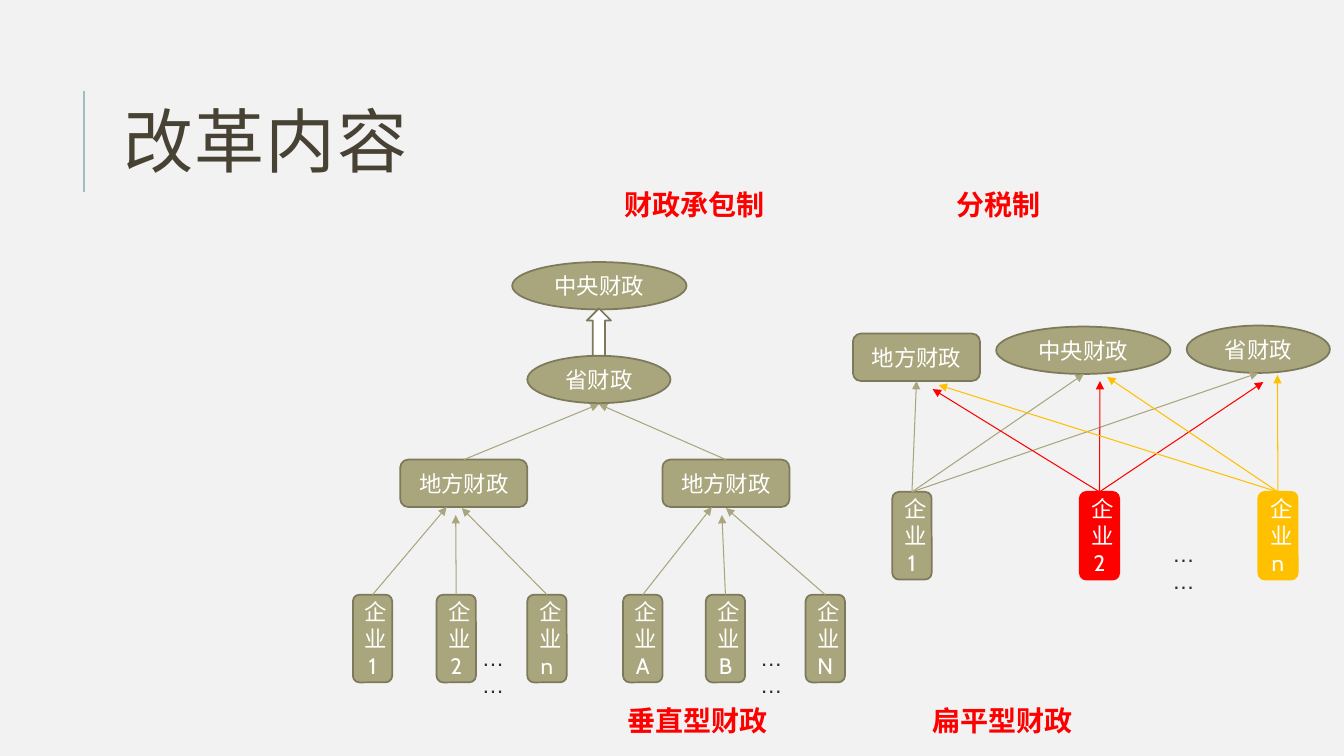
import pptx
import pptx.util
import pptx.dml.color
import pptx.enum.shapes
import pptx.enum.text
import pptx.oxml.ns
from lxml import etree

Inches = pptx.util.Inches
Pt = pptx.util.Pt
qn = pptx.oxml.ns.qn
SHAPE = pptx.enum.shapes.MSO_SHAPE
ANCHOR = pptx.enum.text.MSO_ANCHOR
ALIGN = pptx.enum.text.PP_ALIGN

COLORS = {
    "background": "F2F2F2", "rule": "9CBEBD", "title": "474233",
    "olive": "A9A57C", "olive_edge": "7D7A5C", "red": "FF0000",
    "amber": "FFC000", "white": "FFFFFF", "ink": "2E2B21",
}
TOP, BOTTOM = 0, 2
LOCAL_W, CENTRAL_W, PROVINCE_W, OFFICE_H = 1.26, 1.73, 1.42, 0.47
FIRM_W, FIRM_H = 0.39, 0.87


def rgb(name):
    return pptx.dml.color.RGBColor.from_string(COLORS[name])


def add_run(frame, text, size, font, color, align=ALIGN.LEFT):
    paragraph = frame.paragraphs[0]
    paragraph.alignment = align
    run = paragraph.add_run()
    run.text = text
    run.font.size = Pt(size)
    run.font.name = font
    run.font.color.rgb = rgb(color)
    return run


def add_title(slide, text):
    title = slide.shapes.title
    title.left, title.top = Inches(1.12), Inches(0.64)
    title.width, title.height = Inches(10.63), Inches(1.64)
    frame = title.text_frame
    frame.auto_size = pptx.enum.text.MSO_AUTO_SIZE.NONE
    frame.vertical_anchor = ANCHOR.MIDDLE
    run = add_run(frame, text, 50, "Calibri", "title")
    run.font._element.set("spc", "100")
    frame.paragraphs[0].line_spacing = 0.8


def add_node(slide, kind, left, top, width, height, text="",
             fill="olive", edge="olive_edge"):
    node = slide.shapes.add_shape(
        kind, Inches(left), Inches(top), Inches(width), Inches(height))
    node.shadow.inherit = False
    node.fill.solid()
    node.fill.fore_color.rgb = rgb(fill)
    node.line.color.rgb = rgb(edge)
    node.line.width = Pt(1.25)
    if text:
        node.text_frame.word_wrap = True
        node.text_frame.vertical_anchor = ANCHOR.MIDDLE
        add_run(node.text_frame, text, 16, "Cabin", "white", ALIGN.CENTER)
    return node


def add_local(slide, left, top):
    return add_node(slide, SHAPE.ROUNDED_RECTANGLE, left, top,
                    LOCAL_W, OFFICE_H, "地方财政")


def add_central(slide, left, top):
    return add_node(slide, SHAPE.OVAL, left, top, CENTRAL_W, OFFICE_H, "中央财政")


def add_province(slide, left, top):
    return add_node(slide, SHAPE.OVAL, left, top, PROVINCE_W, OFFICE_H, "省财政")


def add_firm(slide, left, top, mark, fill="olive", edge="olive_edge"):
    return add_node(slide, SHAPE.ROUNDED_RECTANGLE, left, top,
                    FIRM_W, FIRM_H, "企业" + mark, fill, edge)


def add_line(slide, start, end, color, width):
    line = slide.shapes.add_connector(
        pptx.enum.shapes.MSO_CONNECTOR.STRAIGHT,
        Inches(start[0]), Inches(start[1]), Inches(end[0]), Inches(end[1]))
    line.line.color.rgb = rgb(color)
    line.line.width = Pt(width)
    etree.SubElement(line._element.spPr, qn("a:effectLst"))
    return line


def add_payment(slide, payer, end, color="olive", receiver=None):
    arrow = add_line(slide, end, end, color, 0.75)
    arrow.begin_connect(payer, TOP)
    if receiver is not None:
        arrow.end_connect(receiver, BOTTOM)
    outline = arrow.line._get_or_add_ln()
    etree.SubElement(outline, qn("a:tailEnd"), type="triangle")


def add_ellipsis(slide, left, top):
    box = slide.shapes.add_textbox(
        Inches(left), Inches(top), Inches(0.51), Inches(0.37))
    box.text_frame.word_wrap = True
    add_run(box.text_frame, "……", 16, "Arial", "ink")


def add_label(slide, center, top, text):
    width = 2
    box = slide.shapes.add_textbox(
        Inches(center - width / 2), Inches(top), Inches(width), Inches(0.44))
    box.text_frame.word_wrap = True
    font = "Noto Sans CJK SC"
    run = add_run(box.text_frame, text, 20, font, "red", ALIGN.CENTER)
    run.font.bold = True
    etree.SubElement(run.font._element, qn("a:ea"), typeface=font)


def add_vertical_system(slide):
    add_central(slide, 5.08, 2.6)
    add_province(slide, 5.23, 3.53)
    add_node(slide, SHAPE.UP_ARROW, 5.82, 3.06, 0.24, 0.47, fill="white")
    branches = [
        (3.97, [(3.5, "1", 4.43, 5.03), (4.33, "2", 4.52, 5.11),
                (5.23, "n", 4.58, 5.04)], 4.68),
        (6.57, [(6.18, "A", 7.06, 5.03), (7, "B", 7.16, 5.11),
                (7.99, "N", 7.2, 5.04)], 7.44),
    ]
    for local_left, firms, ellipsis_left in branches:
        local = add_local(slide, local_left, 4.56)
        add_payment(slide, local, (5.94, 4.01))
        for left, mark, end_x, end_y in firms:
            firm = add_firm(slide, left, 5.9, mark)
            add_payment(slide, firm, (end_x, end_y))
        add_ellipsis(slide, ellipsis_left, 6.34)


def add_flat_system(slide):
    add_central(slide, 9.88, 3.24)
    local = add_local(slide, 8.46, 3.31)
    add_province(slide, 11.77, 3.23)
    firms = [
        (8.85, "1", "olive", "olive_edge",
         [(9.09, 3.78), (10.75, 3.71), (12.48, 3.7)]),
        (10.71, "2", "red", "red",
         [(9.25, 3.86), (10.91, 3.78), (12.53, 3.79)]),
        (12.48, "n", "amber", "amber",
         [(9.31, 3.82), (10.98, 3.74), (12.67, 3.72)]),
    ]
    for left, mark, color, edge, ends in firms:
        firm = add_firm(slide, left, 4.88, mark, color, edge)
        for end in ends:
            receiver = local if end == (9.09, 3.78) else None
            add_payment(slide, firm, end, color, receiver)
    add_ellipsis(slide, 11.53, 5.31)


def main():
    deck = pptx.Presentation()
    deck.slide_width, deck.slide_height = Inches(13.33), Inches(7.5)
    slide = deck.slides.add_slide(deck.slide_layouts[5])
    slide.background.fill.solid()
    slide.background.fill.fore_color.rgb = rgb("background")
    add_line(slide, (0.83, 1.9), (0.83, 0.9), "rule", 1.5)
    add_title(slide, "改革内容")
    add_vertical_system(slide)
    add_flat_system(slide)
    for center, top, text in [
        (6.89, 1.81, "财政承包制"), (9.9, 1.81, "分税制"),
        (6.92, 6.93, "垂直型财政"), (9.94, 6.93, "扁平型财政"),
    ]:
        add_label(slide, center, top, text)
    deck.save("out.pptx")


if __name__ == "__main__":
    main()
